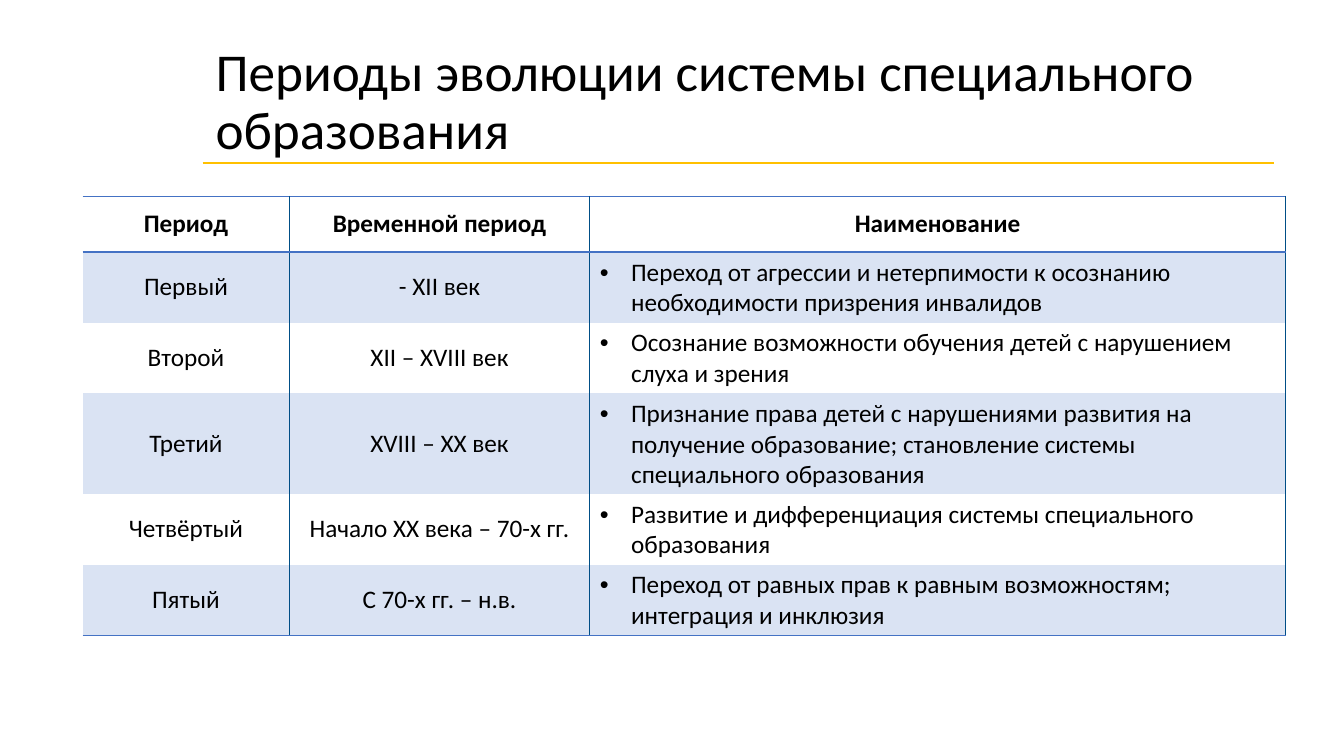
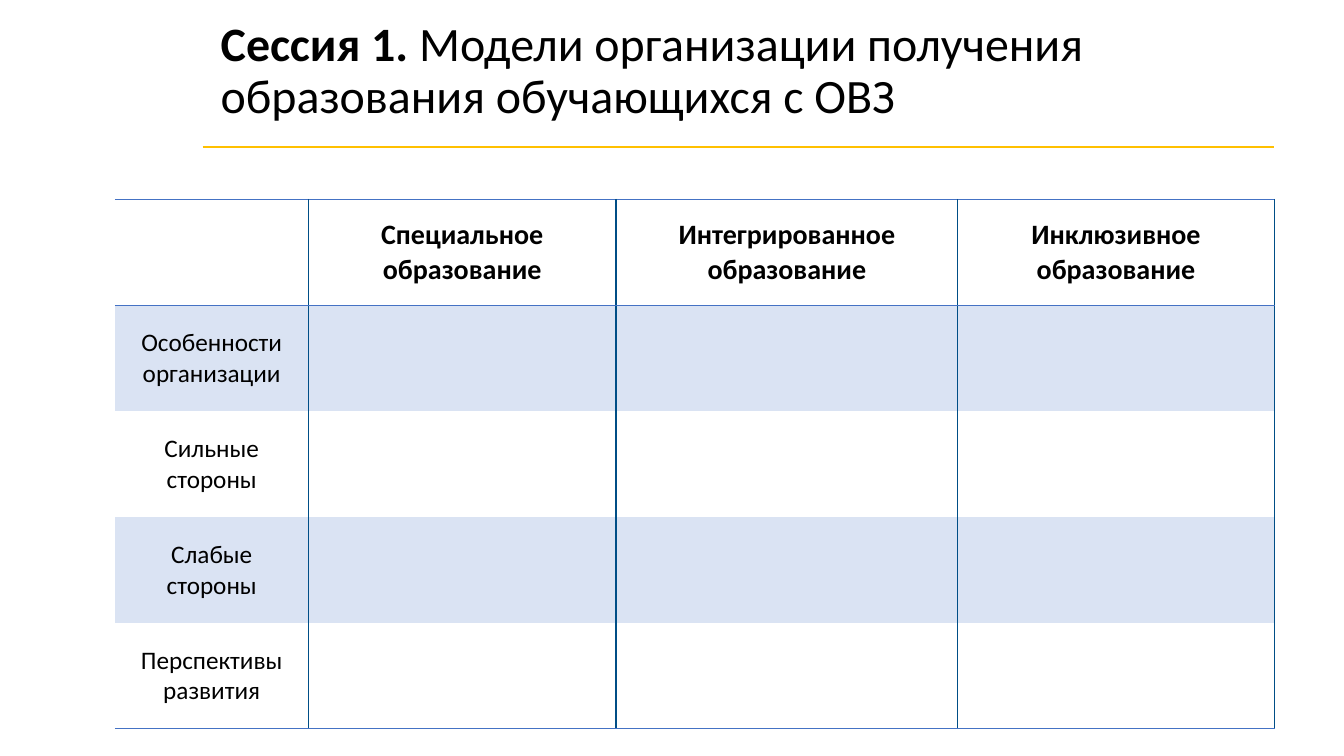
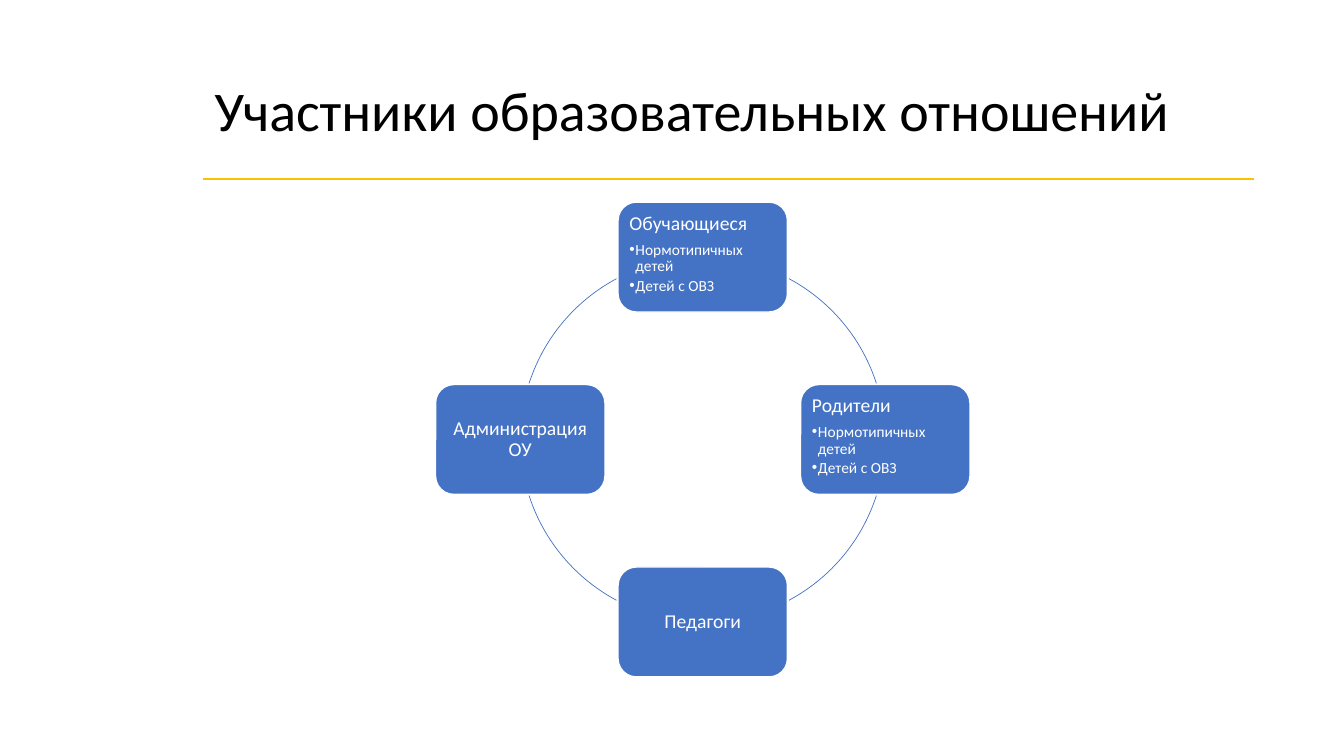
from math import cos, radians, sin

from pptx import Presentation
from pptx.dml.color import RGBColor
from pptx.enum.shapes import MSO_CONNECTOR, MSO_SHAPE
from pptx.enum.text import MSO_ANCHOR, PP_ALIGN
from pptx.oxml.ns import qn
from pptx.util import Inches, Pt
from lxml.etree import SubElement

FONT = "Calibri"
BLACK = RGBColor(0x00, 0x00, 0x00)
WHITE = RGBColor(0xFF, 0xFF, 0xFF)
GOLD = RGBColor(0xFF, 0xC0, 0x00)
BLUE = RGBColor(0x44, 0x72, 0xC4)
NAVY = RGBColor(0x00, 0x4E, 0x86)
BAND = RGBColor(0xDA, 0xE3, 0xF3)

RULE_LEFT = 2.01
RULE_RIGHT = 12.64

PERIODS = [
    ["Период", "Временной период", "Наименование"],
    ["Первый", "- XII век",
     "Переход от агрессии и нетерпимости к осознанию необходимости призрения инвалидов"],
    ["Второй", "XII – XVIII век",
     "Осознание возможности обучения детей с нарушением слуха и зрения"],
    ["Третий", "XVIII – XX век",
     "Признание права детей с нарушениями развития на получение образование; "
     "становление системы специального образования"],
    ["Четвёртый", "Начало XX века – 70-х гг.",
     "Развитие и дифференциация системы специального образования"],
    ["Пятый", "С 70-х гг. – н.в.",
     "Переход от равных прав к равным возможностям; интеграция и инклюзия"],
]
MODELS = [
    ["", "Специальное образование", "Интегрированное образование", "Инклюзивное образование"],
    ["Особенности организации", "", "", ""],
    ["Сильные стороны", "", "", ""],
    ["Слабые стороны", "", "", ""],
    ["Перспективы развития", "", "", ""],
]
CHILDREN = ["Нормотипичных детей", "Детей с ОВЗ"]
PARTICIPANTS = [
    ("Обучающиеся", CHILDREN),
    ("Родители", CHILDREN),
    ("Педагоги", []),
    ("Администрация ОУ", []),
]


def write(p, text, size=18, color=BLACK, bold=False, align=PP_ALIGN.LEFT,
          bullet=None, spacing=None, after=None):
    p.alignment = align
    if spacing:
        p.line_spacing = spacing
    if after is not None:
        p.space_after = Pt(after)
    if bullet:
        pPr = p._p.get_or_add_pPr()
        pPr.set("marL", str(Inches(bullet)))
        pPr.set("indent", str(-Inches(bullet)))
        SubElement(pPr, qn("a:buFont")).set("typeface", "Arial")
        SubElement(pPr, qn("a:buChar")).set("char", "•")
    r = p.add_run()
    r.text = text
    r.font.name = FONT
    r.font.size = Pt(size)
    r.font.bold = bold
    r.font.color.rgb = color


def add_title(s, box, runs, size, rule_y, rule_right=RULE_RIGHT):
    tf = s.shapes.add_textbox(*map(Inches, box)).text_frame
    tf.word_wrap = True
    tf.vertical_anchor = MSO_ANCHOR.MIDDLE
    for text, bold in runs:
        write(tf.paragraphs[0], text, size=size, bold=bold, spacing=0.9)
    rule = s.shapes.add_connector(MSO_CONNECTOR.STRAIGHT, Inches(RULE_LEFT), Inches(rule_y),
                                  Inches(rule_right), Inches(rule_y))
    rule.line.color.rgb = GOLD
    rule.line.width = Pt(1.5)
    SubElement(rule._element.spPr, qn("a:effectLst"))


def set_borders(cell, **colors):
    tcPr = cell._tc.get_or_add_tcPr()
    for i, side in enumerate("LRTB"):
        ln = tcPr.makeelement(qn(f"a:ln{side}"), {"w": str(Pt(1))})
        color = colors.get(side)
        if color is None:
            SubElement(ln, qn("a:noFill"))
        else:
            fill = SubElement(ln, qn("a:solidFill"))
            SubElement(fill, qn("a:srgbClr")).set("val", str(color))
        tcPr.insert(i, ln)


def add_grid(s, left, top, widths, heights, rows, head_size, bullet_col=None):
    frame = s.shapes.add_table(len(rows), len(widths), Inches(left), Inches(top),
                               Inches(sum(widths)), Inches(sum(heights)))
    table = frame.table
    table.horz_banding = False
    for col, width in zip(table.columns, widths):
        col.width = Inches(width)
    for row, height in zip(table.rows, heights):
        row.height = Inches(height)
    last = len(rows) - 1
    for i, row in enumerate(rows):
        for j, text in enumerate(row):
            cell = table.cell(i, j)
            cell.vertical_anchor = MSO_ANCHOR.MIDDLE
            if i % 2:
                cell.fill.solid()
                cell.fill.fore_color.rgb = BAND
            else:
                cell.fill.background()
            set_borders(cell, L=NAVY if j else None, R=NAVY,
                        T=BLUE if i < 2 else None, B=BLUE if i in (0, last) else None)
            if text:
                bulleted = i > 0 and j == bullet_col
                write(cell.text_frame.paragraphs[0], text,
                      size=18 if i else head_size, bold=i == 0,
                      align=PP_ALIGN.LEFT if bulleted else PP_ALIGN.CENTER,
                      bullet=0.31 if bulleted else None)


def add_node(s, box, heading, items):
    sp = s.shapes.add_shape(MSO_SHAPE.ROUNDED_RECTANGLE, *map(Inches, box))
    sp.shadow.inherit = False
    sp.fill.solid()
    sp.fill.fore_color.rgb = BLUE
    sp.line.color.rgb = WHITE
    sp.line.width = Pt(1)
    tf = sp.text_frame
    tf.word_wrap = True
    tf.margin_left = tf.margin_right = tf.margin_top = tf.margin_bottom = Inches(0.06)
    tf.vertical_anchor = MSO_ANCHOR.TOP if items else MSO_ANCHOR.MIDDLE
    write(tf.paragraphs[0], heading, size=14, color=WHITE, spacing=0.9,
          after=5 if items else 0, align=PP_ALIGN.LEFT if items else PP_ALIGN.CENTER)
    for item in items:
        write(tf.add_paragraph(), item, size=11, color=WHITE, spacing=0.9, after=2, bullet=0.06)


def add_arc(s, box, start, end):
    arc = s.shapes.add_shape(MSO_SHAPE.ARC, *map(Inches, box))
    arc.shadow.inherit = False
    arc.adjustments[0] = start * 0.6
    arc.adjustments[1] = end * 0.6
    arc.fill.background()
    arc.line.color.rgb = BLUE
    arc.line.width = Pt(0.5)


def add_cycle(s, cx, cy, radius, nodes, width=1.68, height=1.09):
    ring = (cx - radius, cy - radius, 2 * radius, 2 * radius)
    for start, end in [(298.2, 342.1), (17.9, 61.8), (118.2, 162.1), (197.9, 241.8)]:
        add_arc(s, ring, start, end)
    for i, (heading, items) in enumerate(nodes):
        angle = radians(360 / len(nodes) * i - 90)
        x = cx + radius * cos(angle) - width / 2
        y = cy + radius * sin(angle) - height / 2
        add_node(s, (x, y, width, height), heading, items)


def periods_slide(s):
    add_title(s, (2.04, 0.4, 10.37, 1.25),
              [("Периоды эволюции системы специального образования", False)], 38, 1.62)
    add_grid(s, 0.82, 1.95, [2.05, 2.98, 6.9], [0.55] + [0.64] * 5, PERIODS, 18, bullet_col=2)


def models_slide(s):
    add_title(s, (2.09, 0.36, 10.32, 0.71),
              [("Сессия 1.", True),
               (" Модели организации получения образования обучающихся с ОВЗ", False)],
              34.2, 1.46)
    add_grid(s, 1.14, 1.98, [1.92, 3.05, 3.39, 3.14], [1.05] * 5, MODELS, 20)


def participants_slide(s):
    add_title(s, (2.03, 0.4, 10.39, 1.45),
              [("Участники образовательных отношений", False)], 40, 1.78, rule_right=12.44)
    add_cycle(s, 6.97, 4.36, 1.81, PARTICIPANTS)


def main():
    prs = Presentation()
    prs.slide_width = Inches(13.33)
    prs.slide_height = Inches(7.5)
    for build in (periods_slide, models_slide, participants_slide):
        build(prs.slides.add_slide(prs.slide_layouts[6]))
    prs.save("out.pptx")


if __name__ == "__main__":
    main()
